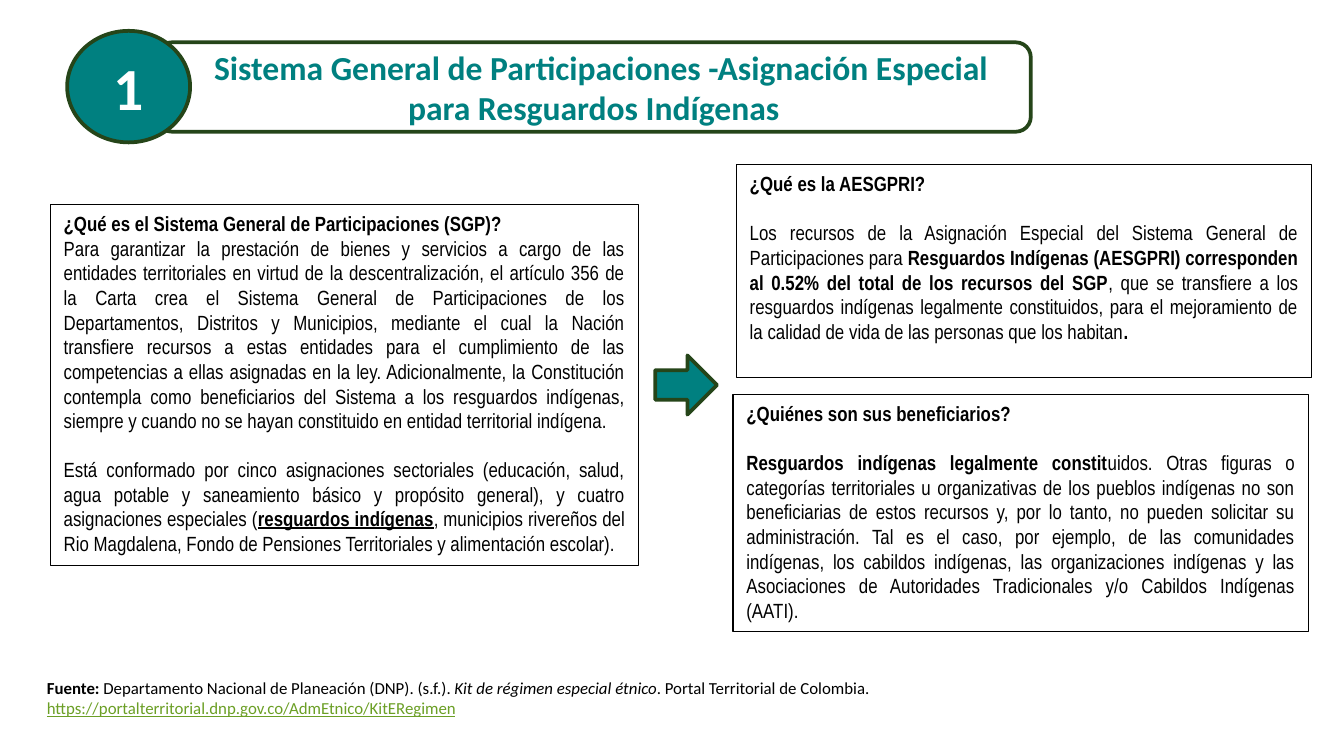
from typing import NamedTuple

from pptx import Presentation
from pptx.dml.color import RGBColor
from pptx.enum.shapes import MSO_SHAPE
from pptx.enum.text import MSO_ANCHOR, PP_ALIGN
from pptx.oxml.ns import qn
from pptx.util import Emu, Pt

PX = 4572  # EMU per px, 200 px to the inch
TEAL, GREEN, LINK = "008080", "254519", "6B9F25"
BLACK, WHITE = "000000", "FFFFFF"


class Box(NamedTuple):
    left: int
    top: int
    width: int
    height: int


class Run(NamedTuple):
    text: str
    bold: bool = False
    italic: bool = False
    underline: bool = False
    color: str = BLACK
    new_line: bool = False


class Paragraph(NamedTuple):
    runs: list[Run]
    space_before: int = 0


class Panel(NamedTuple):
    box: Box
    paragraphs: list[Paragraph]


GAP = 13  # one line of panel text, in points

PANELS = [
    Panel(Box(75, 304, 875, 538), [
        Paragraph([Run("¿Qué es el Sistema General de Participaciones (SGP)?", bold=True)]),
        Paragraph([Run(
            "Para garantizar la prestación de bienes y servicios a cargo de las entidades "
            "territoriales en virtud de la descentralización, el artículo 356 de la Carta crea "
            "el Sistema General de Participaciones de los Departamentos, Distritos y Municipios, "
            "mediante el cual la Nación transfiere recursos a estas entidades para el "
            "cumplimiento de las competencias a ellas asignadas en la ley. Adicionalmente, la "
            "Constitución contempla como beneficiarios del Sistema a los resguardos indígenas, "
            "siempre y cuando no se hayan constituido en entidad territorial indígena.")]),
        Paragraph([
            Run("Está conformado por cinco asignaciones sectoriales (educación, salud, agua "
                "potable y saneamiento básico y propósito general), y cuatro asignaciones "
                "especiales ("),
            Run("resguardos indígenas", bold=True, underline=True),
            Run(", municipios rivereños del Rio Magdalena, Fondo de Pensiones Territoriales y "
                "alimentación escolar)."),
        ], GAP),
    ]),
    Panel(Box(1096, 245, 856, 317), [
        Paragraph([Run("¿Qué es la AESGPRI?", bold=True)]),
        Paragraph([
            Run("Los recursos de la Asignación Especial del Sistema General de Participaciones "
                "para "),
            Run("Resguardos Indígenas (AESGPRI) corresponden al 0.52% del total de los recursos "
                "del SGP", bold=True),
            Run(", que se transfiere a los resguardos indígenas legalmente constituidos, para el "
                "mejoramiento de la calidad de vida de las personas que los habitan"),
            Run(".", bold=True),
        ], GAP),
    ]),
    Panel(Box(1091, 587, 856, 353), [
        Paragraph([Run("¿Quiénes son sus beneficiarios?", bold=True)]),
        Paragraph([
            Run("Resguardos indígenas legalmente constit", bold=True),
            Run("uidos. Otras figuras o categorías territoriales u organizativas de los pueblos "
                "indígenas no son beneficiarias de estos recursos y, por lo tanto, no pueden "
                "solicitar su administración. Tal es el caso, por ejemplo, de las comunidades "
                "indígenas, los cabildos indígenas, las organizaciones indígenas y las "
                "Asociaciones de Autoridades Tradicionales y/o Cabildos Indígenas (AATI)."),
        ], GAP),
    ]),
]

SOURCE = Paragraph([
    Run("Fuente: ", bold=True),
    Run("Departamento Nacional de Planeación (DNP). (s.f.). "),
    Run("Kit de régimen especial étnico", italic=True),
    Run(". Portal Territorial de Colombia."),
    Run("https://portalterritorial.dnp.gov.co/AdmEtnico/KitERegimen",
        underline=True, color=LINK, new_line=True),
])


def rgb(color: str) -> RGBColor:
    return RGBColor.from_string(color)


def emu(box: Box) -> list[Emu]:
    return [Emu(v * PX) for v in box]


def add_shape(s, kind: MSO_SHAPE, box: Box, fill: str | None, line: str, weight: float):
    sp = s.shapes.add_shape(kind, *emu(box))
    sp.shadow.inherit = False
    if fill:
        sp.fill.solid()
        sp.fill.fore_color.rgb = rgb(fill)
    else:
        sp.fill.background()
    sp.line.color.rgb = rgb(line)
    sp.line.width = Pt(weight)
    return sp


def write(sp, paragraphs: list[Paragraph], font: str, size: int, align: PP_ALIGN,
          anchor: MSO_ANCHOR = MSO_ANCHOR.TOP) -> None:
    tf = sp.text_frame
    tf.word_wrap = True
    tf.vertical_anchor = anchor
    for i, paragraph in enumerate(paragraphs):
        p = tf.add_paragraph() if i else tf.paragraphs[0]
        p.alignment = align
        if paragraph.space_before:
            p.space_before = Pt(paragraph.space_before)
        for run in paragraph.runs:
            if run.new_line:
                p.add_line_break()
            r = p.add_run()
            r.text = run.text
            r.font.name = font
            r.font.size = Pt(size)
            r.font.bold = run.bold
            r.font.italic = run.italic
            r.font.underline = run.underline
            r.font.color.rgb = rgb(run.color)


def indent_first_line(p, points: int) -> None:
    p._p.get_or_add_pPr().set("indent", str(Pt(points)))


def main() -> None:
    prs = Presentation()
    prs.slide_width, prs.slide_height = Emu(2000 * PX), Emu(1125 * PX)
    s = prs.slides.add_slide(prs.slide_layouts[6])

    title = add_shape(s, MSO_SHAPE.ROUNDED_RECTANGLE, Box(234, 63, 1300, 133), WHITE, GREEN, 2)
    heading = Run("Sistema General de Participaciones -Asignación Especial para Resguardos "
                  "Indígenas", bold=True, color=TEAL)
    write(title, [Paragraph([heading])], "Calibri", 18, PP_ALIGN.CENTER, MSO_ANCHOR.MIDDLE)
    indent_first_line(title.text_frame.paragraphs[0], 8)

    badge = add_shape(s, MSO_SHAPE.OVAL, Box(100, 46, 183, 166), TEAL, GREEN, 2)
    number = Run("1", bold=True, color=WHITE)
    write(badge, [Paragraph([number])], "Calibri", 32, PP_ALIGN.CENTER, MSO_ANCHOR.MIDDLE)

    for panel in PANELS:
        sp = add_shape(s, MSO_SHAPE.RECTANGLE, panel.box, None, BLACK, 0.75)
        write(sp, panel.paragraphs, "Arial Narrow", 11, PP_ALIGN.JUSTIFY)

    add_shape(s, MSO_SHAPE.RIGHT_ARROW, Box(975, 529, 92, 88), TEAL, GREEN, 2)

    source = s.shapes.add_textbox(*emu(Box(50, 999, 1850, 80)))
    write(source, [SOURCE], "Calibri", 9, PP_ALIGN.LEFT)
    for line_break in source.text_frame.paragraphs[0]._p.findall(qn("a:br")):
        line_break.get_or_add_rPr().set("sz", "900") if hasattr(
            line_break, "get_or_add_rPr") else None

    prs.save("out.pptx")


if __name__ == "__main__":
    main()
